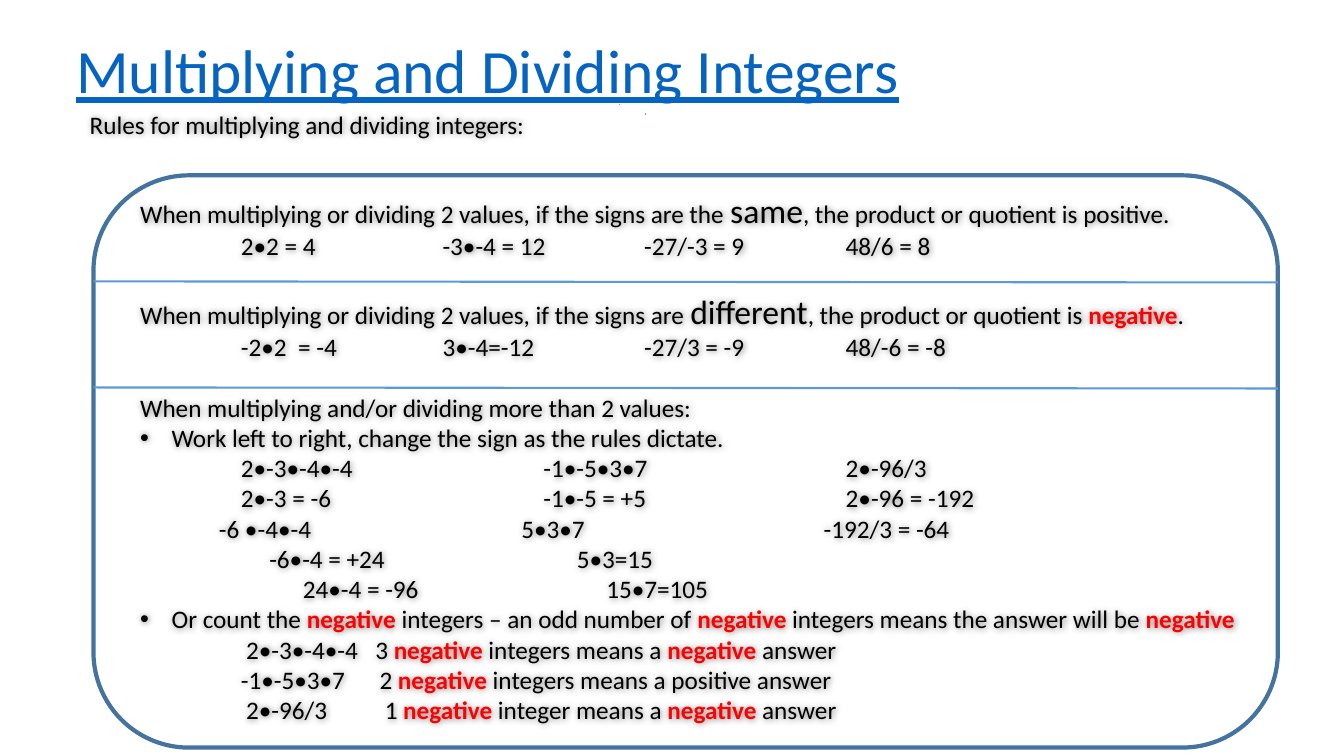
from dataclasses import dataclass

from lxml import etree
from pptx import Presentation
from pptx import util as u
from pptx.dml.color import RGBColor
from pptx.enum import shapes, text
from pptx.oxml import ns

PX = 9525


@dataclass(frozen=True)
class Theme:
    """Colours, font and type sizes of the slide."""
    font: str = "Calibri"
    title: str = "0563C1"
    body: str = "000000"
    negative: str = "FF0000"
    frame: str = "43739E"
    divider: str = "5B9BD5"
    title_size: int = 44
    body_size: int = 18
    large_size: int = 24


@dataclass(frozen=True)
class Line:
    """One paragraph: text with | between runs, and its layout."""
    words: str
    left: int = 0
    gap: int = 96
    hang: int = 0
    before: float = 0


THEME = Theme()
INDENT = 48
BULLET = {"left": 78, "hang": 30}
FOUR = {"left": 144, "gap": 192}
THREE = {"left": 144, "gap": 288}
LINES = (
    Line("Rules for multiplying and dividing integers:"),
    Line("When multiplying or dividing 2 values, if the signs are the |same|"
         ", the product or quotient is positive.", INDENT, before=36.6),
    Line("2•2 = 4\t-3•-4 = 12\t-27/-3 = 9\t48/6 = 8", **FOUR),
    Line("When multiplying or dividing 2 values, if the signs are |different|"
         ", the product or quotient is |negative|.", INDENT, before=21.3),
    Line("-2•2  = -4\t3•-4=-12\t-27/3 = -9\t48/-6 = -8", **FOUR),
    Line("When multiplying and/or dividing more than 2 values:", INDENT, before=22),
    Line("Work left to right, change the sign as the rules dictate.", **BULLET),
    Line("2•-3•-4•-4\t-1•-5•3•7\t2•-96/3", **THREE),
    Line("2•-3 = -6\t-1•-5 = +5\t2•-96 = -192", **THREE),
    Line("-6 •-4•-4\t5•3•7\t-192/3 = -64", 123, 288),
    Line("-6•-4 = +24\t5•3=15", 171, 293),
    Line("24•-4 = -96\t15•7=105", 203, 289),
    Line("Or count the |negative| integers – an odd number of |negative|"
         " integers means the answer will be |negative", **BULLET),
    Line("2•-3•-4•-4\t3 |negative| integers means a |negative| answer", 149, 123),
    Line("-1•-5•3•7\t2 |negative| integers means a positive answer", 144, 132),
    Line("2•-96/3\t1 |negative| integer means a |negative| answer", 149, 132),
)


def px(value):
    """Turn px into EMU."""
    return u.Emu(value * PX)


def child(parent, tag, **attributes):
    """Append a DrawingML element."""
    names = {name: str(value) for name, value in attributes.items()}
    return etree.SubElement(parent, ns.qn("a:" + tag), names)


def add_run(paragraph, words, size, color, bold=False):
    """Add one styled run."""
    run = paragraph.add_run()
    run.text = words
    run.font.name = THEME.font
    run.font.size = u.Pt(size)
    run.font.color.rgb = RGBColor.from_string(color)
    run.font.bold = bold
    return run


def add_box(slide, box):
    """Add a wrapping text box."""
    shape = slide.shapes.add_textbox(*map(px, box))
    shape.text_frame.word_wrap = True
    return shape


def add_line(slide, start, end, width):
    """Add a thin straight line."""
    line = slide.shapes.add_connector(
        shapes.MSO_CONNECTOR.STRAIGHT, *map(px, start + end))
    line.line.color.rgb = RGBColor.from_string(THEME.divider)
    line.line.width = u.Pt(width)
    child(line._element.spPr, "effectLst")


def add_title(slide, box):
    """Place the underlined heading and the two small ticks below it."""
    frame = add_box(slide, box).text_frame
    frame.vertical_anchor = text.MSO_ANCHOR.MIDDLE
    paragraph = frame.paragraphs[0]
    paragraph.line_spacing = 0.9
    run = add_run(paragraph, "Multiplying and Dividing Integers",
                  THEME.title_size, THEME.title)
    run.font.underline = True
    left, top = box[:2]
    for x, y, drop in ((552, 107, 2), (527, 98, 1)):
        add_line(slide, (left + x, top + y), (left + x, top + y + drop), 0.5)


def add_rules(slide, box):
    """Place the rules and worked examples with a soft text shadow."""
    shape = add_box(slide, box)
    effects = child(shape._element.spPr, "effectLst")
    shadow = child(effects, "outerShdw", blurRad=50800, dist=12700,
                   dir=2700000, algn="tl", rotWithShape=0)
    child(child(shadow, "prstClr", val="black"), "alpha", val=50000)
    frame = shape.text_frame
    for index, line in enumerate(LINES):
        paragraph = frame.add_paragraph() if index else frame.paragraphs[0]
        paragraph.space_before = u.Pt(line.before)
        properties = paragraph._p.get_or_add_pPr()
        properties.set("marL", str(px(line.left)))
        properties.set("indent", str(px(-line.hang)))
        properties.set("defTabSz", str(px(line.gap)))
        if line.hang:
            child(properties, "buFont", typeface="Arial")
            child(properties, "buChar", char="•")
        for words in line.words.split("|"):
            negative = words == "negative"
            size = THEME.large_size if words in ("same", "different") else THEME.body_size
            add_run(paragraph, words, size,
                    THEME.negative if negative else THEME.body, negative)


def add_frame(slide, box):
    """Draw the rounded outline and its two dividers."""
    shape = slide.shapes.add_shape(
        shapes.MSO_SHAPE.ROUNDED_RECTANGLE, *map(px, box))
    shape.shadow.inherit = False
    shape.fill.background()
    shape.line.color.rgb = RGBColor.from_string(THEME.frame)
    shape.line.width = u.Pt(3)
    left, top, width, _ = box
    for row in (1, 2):
        y = top + row * 101
        add_line(slide, (left, y), (left + width, y + 1), 1.5)


def main():
    """Build and save the slide."""
    presentation = Presentation()
    presentation.slide_width, presentation.slide_height = px(1280), px(720)
    slide = presentation.slides.add_slide(presentation.slide_layouts[6])
    add_title(slide, (63, 1, 1104, 139))
    add_rules(slide, (76, 99, 1154, 610))
    add_frame(slide, (89, 167, 1128, 545))
    presentation.save("out.pptx")


if __name__ == "__main__":
    main()
